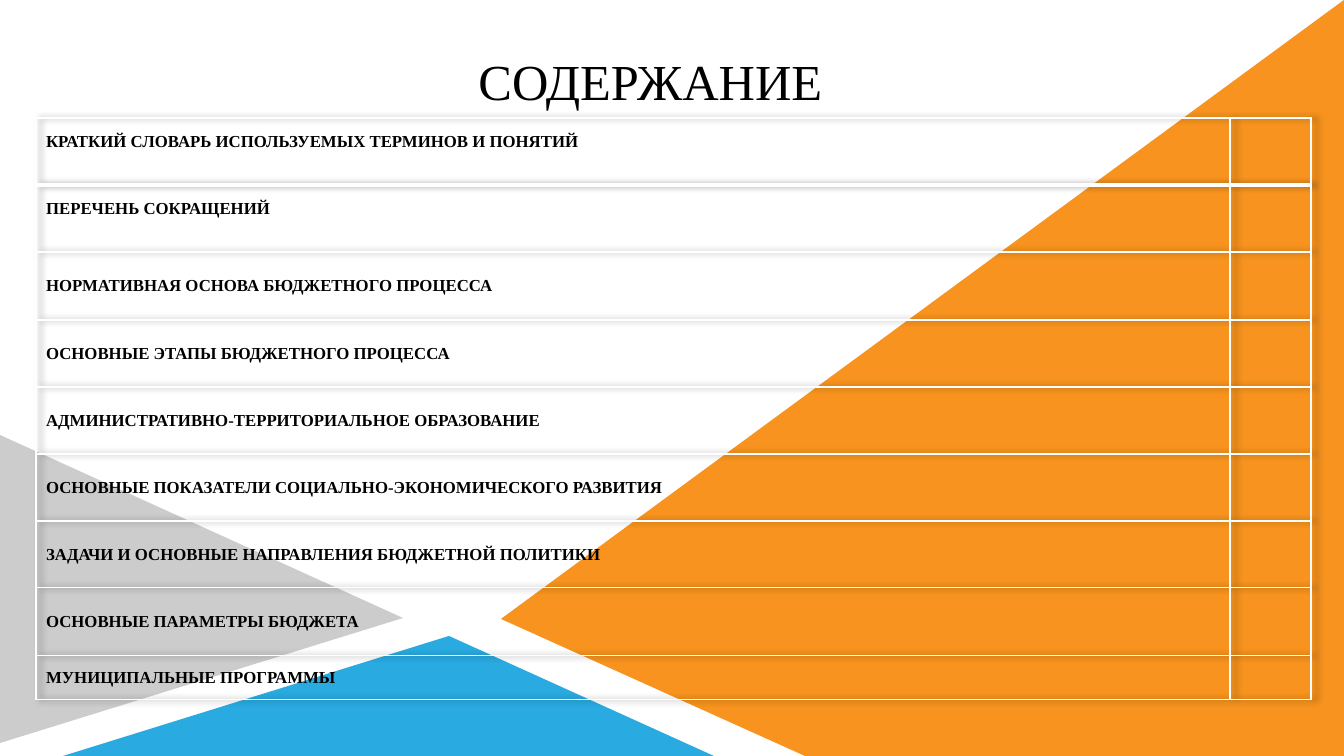
from lxml import etree
from pptx import Presentation
from pptx.dml.color import RGBColor
from pptx.enum.text import MSO_ANCHOR, PP_ALIGN
from pptx.oxml import parse_xml
from pptx.oxml.ns import qn
from pptx.util import Emu, Pt

SCALE = 12192000 / 1344
CENTER = PP_ALIGN.CENTER
JUSTIFY = PP_ALIGN.JUSTIFY
BOTTOM = MSO_ANCHOR.BOTTOM
MIDDLE = MSO_ANCHOR.MIDDLE
DRAWING_NS = "http://schemas.openxmlformats.org/drawingml/2006/main"
COLORS = {
    "white": "FFFFFF",
    "black": "000000",
    "gray": "CCCCCC",
    "orange": "F7931E",
    "blue": "29ABE2",
}
TRIANGLES = [
    ("gray", [(403, 618), (0, 435), (0, 743)]),
    ("orange", [(501, 619), (805, 756), (1344, 756), (1344, 0)]),
    ("blue", [(449, 636), (63, 756), (714, 756)]),
]
SECTIONS = [
    "КРАТКИЙ СЛОВАРЬ ИСПОЛЬЗУЕМЫХ ТЕРМИНОВ И ПОНЯТИЙ",
    "ПЕРЕЧЕНЬ СОКРАЩЕНИЙ",
    "НОРМАТИВНАЯ ОСНОВА БЮДЖЕТНОГО ПРОЦЕССА",
    "ОСНОВНЫЕ ЭТАПЫ БЮДЖЕТНОГО ПРОЦЕССА",
    "АДМИНИСТРАТИВНО-ТЕРРИТОРИАЛЬНОЕ ОБРАЗОВАНИЕ",
    "ОСНОВНЫЕ ПОКАЗАТЕЛИ СОЦИАЛЬНО-ЭКОНОМИЧЕСКОГО РАЗВИТИЯ",
    "ЗАДАЧИ И ОСНОВНЫЕ НАПРАВЛЕНИЯ БЮДЖЕТНОЙ ПОЛИТИКИ",
    "ОСНОВНЫЕ ПАРАМЕТРЫ БЮДЖЕТА",
    "МУНИЦИПАЛЬНЫЕ ПРОГРАММЫ",
]
COLUMN_WIDTHS = [1194, 81]
ROW_HEIGHTS = [67, 67, 68, 67, 67, 67, 67, 68, 44]
RAISED_ROWS = 2


def px(value):
    return Emu(round(value * SCALE))


class ContentsPage:
    font = "Times New Roman"

    def __init__(self, deck):
        self.page = deck.slides.add_slide(deck.slide_layouts[6])

    def style(self, paragraph, size, align, bold=False):
        paragraph.alignment = align
        for span in paragraph.runs:
            span.font.name = self.font
            span.font.size = Pt(size)
            span.font.bold = bold
            span.font.color.rgb = RGBColor.from_string(COLORS["black"])

    def polygon(self, color, points):
        builder = self.page.shapes.build_freeform(*points[0], scale=SCALE)
        builder.add_line_segments(points[1:], close=True)
        shape = builder.convert_to_shape()
        shape.shadow.inherit = False
        shape.fill.solid()
        shape.fill.fore_color.rgb = RGBColor.from_string(COLORS[color])
        shape.line.fill.background()

    def title(self, text, left, top, width, height):
        box = self.page.shapes.add_textbox(px(left), px(top), px(width), px(height))
        frame = box.text_frame
        frame.word_wrap = True
        frame.vertical_anchor = BOTTOM
        frame.margin_left = frame.margin_right = px(10)
        frame.margin_top = frame.margin_bottom = px(10)
        frame.text = text
        frame.paragraphs[0].line_spacing = 0.9
        self.style(frame.paragraphs[0], 36, CENTER)

    def borders(self, cell, widths):
        properties = cell._tc.get_or_add_tcPr()
        for position, (side, width) in enumerate(widths.items()):
            line = etree.Element(qn(f"a:{side}"), w=str(Pt(width)))
            fill = etree.SubElement(line, qn("a:solidFill"))
            etree.SubElement(fill, qn("a:srgbClr"), val=COLORS["white"])
            properties.insert(position, line)

    def table_shadow(self, table):
        effect = parse_xml(
            f'<a:effectLst xmlns:a="{DRAWING_NS}">'
            '<a:outerShdw blurRad="50800" dist="38100" dir="0">'
            f'<a:srgbClr val="{COLORS["black"]}"><a:alpha val="40000"/></a:srgbClr>'
            "</a:outerShdw></a:effectLst>"
        )
        table._tbl.tblPr.insert(0, effect)

    def contents(self, sections, left, top):
        frame = self.page.shapes.add_table(
            len(sections), len(COLUMN_WIDTHS), px(left), px(top),
            px(sum(COLUMN_WIDTHS)), px(sum(ROW_HEIGHTS)),
        )
        table = frame.table
        table.first_row = table.horz_banding = False
        self.table_shadow(table)
        for column, width in zip(table.columns, COLUMN_WIDTHS):
            column.width = px(width)
        for index, (row, height) in enumerate(zip(table.rows, ROW_HEIGHTS)):
            row.height = px(height)
            widths = {
                "lnL": 1,
                "lnR": 1,
                "lnT": 3 if index == 1 else 1,
                "lnB": 3 if index == 0 else 1,
            }
            for cell in row.cells:
                cell.fill.background()
                cell.vertical_anchor = MIDDLE
                self.borders(cell, widths)
            entry = row.cells[0]
            entry.text = sections[index]
            if index < RAISED_ROWS:
                entry.margin_bottom = px(24)
            self.style(entry.text_frame.paragraphs[0], 12, JUSTIFY, bold=True)


def main():
    deck = Presentation()
    deck.slide_width, deck.slide_height = px(1344), px(756)
    page = ContentsPage(deck)
    for color, points in TRIANGLES:
        page.polygon(color, points)
    page.title("СОДЕРЖАНИЕ", 436, 37, 429, 84)
    page.contents(SECTIONS, 36, 118)
    deck.save("out.pptx")


if __name__ == "__main__":
    main()
